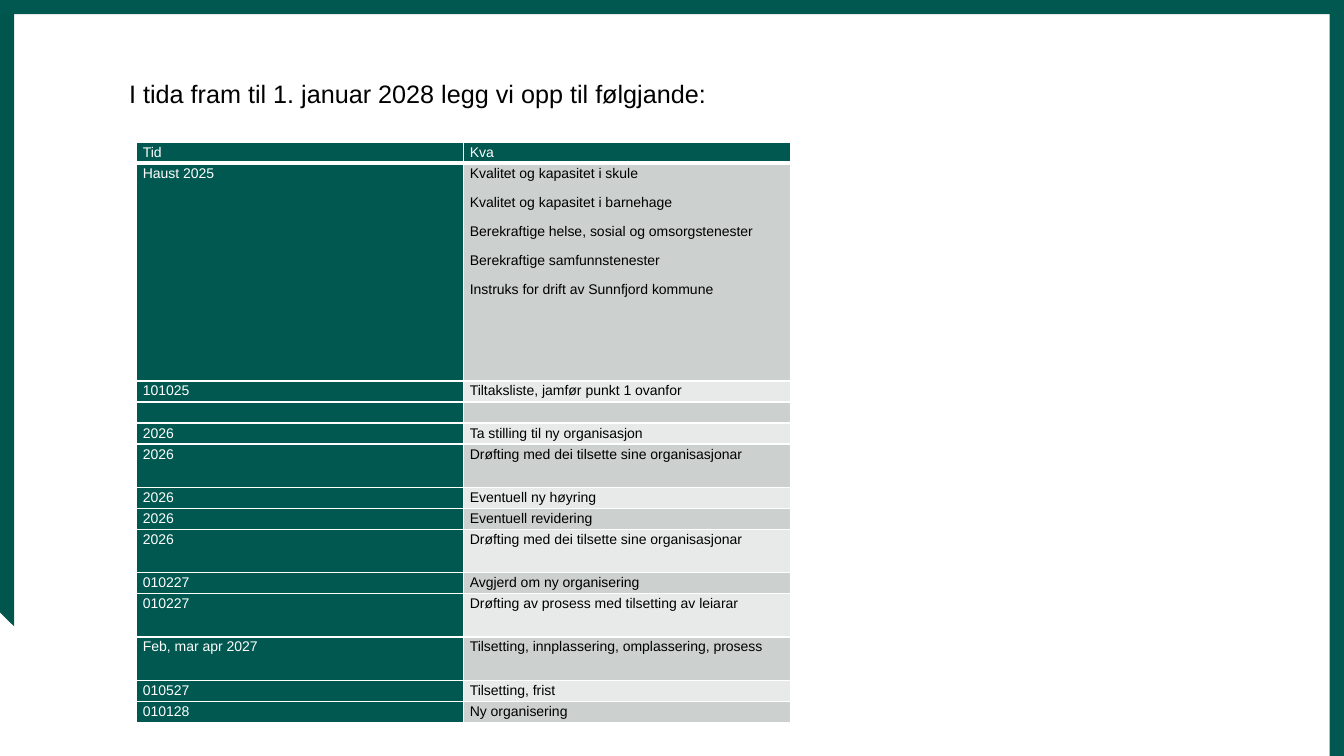
import pptx
import pptx.dml.color
import pptx.enum.shapes
import pptx.enum.text
import pptx.oxml
import pptx.oxml.ns
import pptx.util
from pptx.util import Cm

WIDTH, HEIGHT, BAR = 33.87, 19.05, 0.36
GREEN, DARK_GREEN = "005850", "00554D"
WHITE, BLACK = "FFFFFF", "000000"
BANDS = ["CCD1D0", "E7EAE9"]
LINE, DOUBLE, TALL = 0.53, 1.09, 5.49

PLAN = [
    (LINE, "Tid", ["Kva"]),
    (TALL, "Haust 2025", [
        "Kvalitet og kapasitet i skule",
        "Kvalitet og kapasitet i barnehage",
        "Berekraftige helse, sosial og omsorgstenester",
        "Berekraftige samfunnstenester",
        "Instruks for drift av Sunnfjord kommune",
    ]),
    (LINE, "101025", ["Tiltaksliste, jamfør punkt 1 ovanfor"]),
    (LINE, "", [""]),
    (LINE, "2026", ["Ta stilling til ny organisasjon"]),
    (DOUBLE, "2026", ["Drøfting med dei tilsette sine organisasjonar"]),
    (LINE, "2026", ["Eventuell ny høyring"]),
    (LINE, "2026", ["Eventuell revidering"]),
    (DOUBLE, "2026", ["Drøfting med dei tilsette sine organisasjonar"]),
    (LINE, "010227", ["Avgjerd om ny organisering"]),
    (DOUBLE, "010227", ["Drøfting av prosess med tilsetting av leiarar"]),
    (DOUBLE, "Feb, mar apr 2027", ["Tilsetting, innplassering, omplassering, prosess"]),
    (LINE, "010527", ["Tilsetting, frist"]),
    (LINE, "010128", ["Ny organisering"]),
]


def rgb(color):
    return pptx.dml.color.RGBColor.from_string(color)


def paint(sp, color):
    sp.shadow.inherit = False
    sp.fill.solid()
    sp.fill.fore_color.rgb = rgb(color)
    sp.line.fill.background()


def add_bar(s, left, top, width, height, color):
    sp = s.shapes.add_shape(
        pptx.enum.shapes.MSO_SHAPE.RECTANGLE, Cm(left), Cm(top), Cm(width), Cm(height))
    paint(sp, color)


def add_outline(s, points, color):
    start, *rest = [(Cm(x), Cm(y)) for x, y in points]
    builder = s.shapes.build_freeform(*start)
    builder.add_line_segments(rest, close=True)
    paint(builder.convert_to_shape(), color)


def format_paragraph(p, size, color):
    p.line_spacing = 1.15
    p.space_before = pptx.util.Pt(0)
    p.space_after = pptx.util.Pt(8)
    p.font.name = "Arial"
    p.font.size = pptx.util.Pt(size)
    p.font.color.rgb = rgb(color)
    if not p.text:
        end = pptx.oxml.parse_xml(
            f'<a:endParaRPr {pptx.oxml.ns.nsdecls("a")} sz="{size * 100}"/>')
        p._p.append(end)


def set_title(s, text):
    sp = s.shapes.title
    sp.left, sp.top, sp.width, sp.height = Cm(3), Cm(1.73), Cm(16.94), Cm(1.09)
    tf = sp.text_frame
    tf.text = text
    tf.word_wrap = True
    tf.auto_size = pptx.enum.text.MSO_AUTO_SIZE.NONE
    tf.vertical_anchor = pptx.enum.text.MSO_ANCHOR.TOP
    p = tf.paragraphs[0]
    p.alignment = pptx.enum.text.PP_ALIGN.LEFT
    format_paragraph(p, 18, BLACK)


def set_borders(cell, widths):
    tc_pr = cell._tc.get_or_add_tcPr()
    for i, (side, width) in enumerate(widths.items()):
        tc_pr.insert(i, pptx.oxml.parse_xml(
            f'<a:ln{side} {pptx.oxml.ns.nsdecls("a")} w="{pptx.util.Pt(width)}">'
            f'<a:solidFill><a:srgbClr val="{WHITE}"/></a:solidFill></a:ln{side}>'))


def fill_cell(cell, lines, fill, color, top, bottom):
    cell.margin_left = cell.margin_right = Cm(0.15)
    cell.margin_top = cell.margin_bottom = 0
    cell.fill.solid()
    cell.fill.fore_color.rgb = rgb(fill)
    cell.text_frame.text = "\n".join(lines)
    for p in cell.text_frame.paragraphs:
        format_paragraph(p, 10, color)
    set_borders(cell, {"L": 1, "R": 1, "T": top, "B": bottom})


def add_plan(s, plan):
    height = sum(row[0] for row in plan)
    table = s.shapes.add_table(
        len(plan), 2, Cm(3.45), Cm(3.58), Cm(16.48), Cm(height)).table
    table.first_row = table.horz_banding = False
    for i, (row_height, time, tasks) in enumerate(plan):
        table.rows[i].height = Cm(row_height)
        top, bottom = (3 if i == 1 else 1), (3 if i == 0 else 1)
        fill, color = (BANDS[(i - 1) % 2], BLACK) if i else (GREEN, WHITE)
        fill_cell(table.cell(i, 0), [time], GREEN, WHITE, top, bottom)
        fill_cell(table.cell(i, 1), tasks, fill, color, top, bottom)


def main():
    prs = pptx.Presentation()
    prs.slide_width, prs.slide_height = Cm(WIDTH), Cm(HEIGHT)
    s = prs.slides.add_slide(prs.slide_layouts[5])
    add_bar(s, 0, BAR, BAR, HEIGHT - BAR, DARK_GREEN)
    add_outline(s, [(0, 15.44), (0, HEIGHT), (3.23, HEIGHT), (3.45, 18.82)], WHITE)
    add_bar(s, 0, 0, WIDTH, BAR, GREEN)
    add_bar(s, WIDTH - BAR, 0.18, BAR, HEIGHT - 0.18, GREEN)
    set_title(s, "I tida fram til 1. januar 2028 legg vi opp til følgjande:")
    add_plan(s, PLAN)
    prs.save("out.pptx")


if __name__ == "__main__":
    main()
